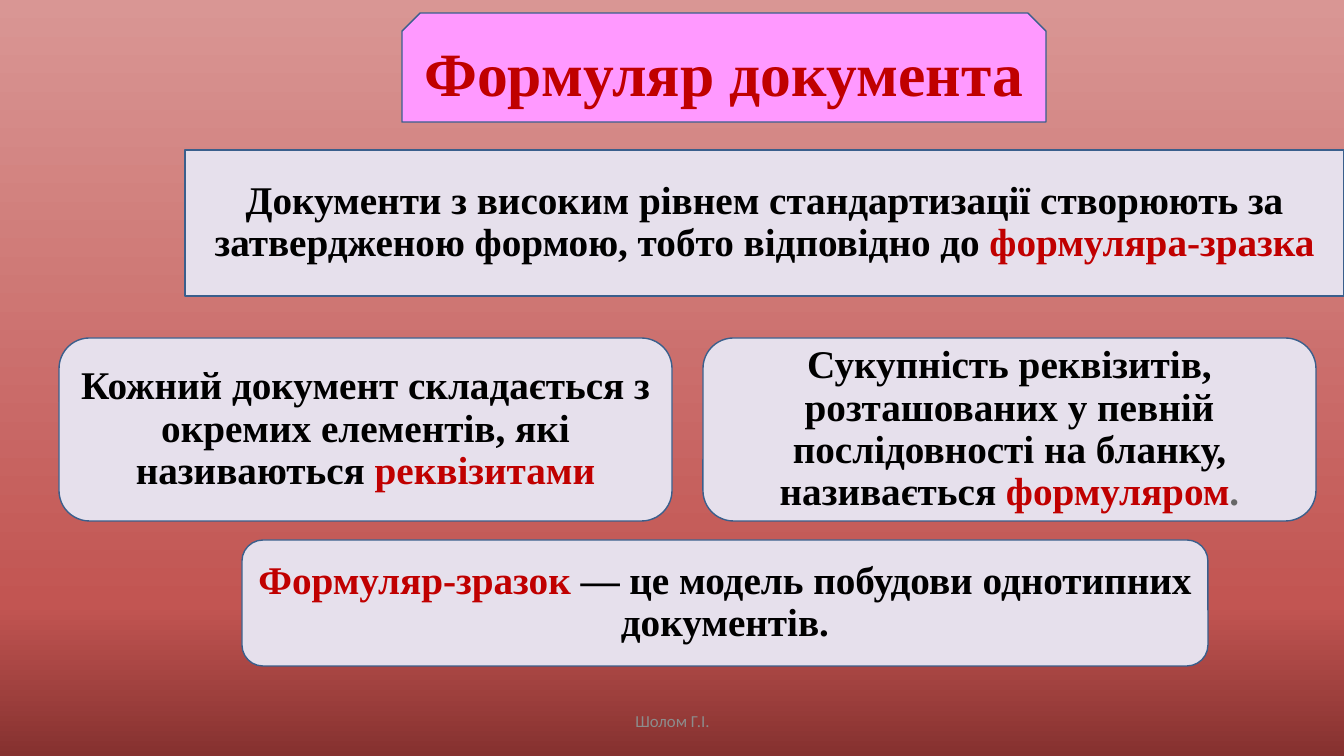
"""Build a slide on the standard form of a document."""
from lxml.etree import SubElement
from pptx import Presentation
from pptx.dml.color import RGBColor
from pptx.enum.shapes import MSO_SHAPE as Shape
from pptx.enum.text import MSO_ANCHOR as Anchor, MSO_AUTO_SIZE as AutoSize, PP_ALIGN as Align
from pptx.oxml.ns import qn
from pptx.util import Emu, Pt

BLACK = RGBColor(0x00, 0x00, 0x00)
RED = RGBColor(0xC0, 0x00, 0x00)
GREY = RGBColor(0x67, 0x67, 0x67)
FOOTER_GREY = RGBColor(0x8C, 0x8C, 0x8C)
LAVENDER = RGBColor(0xE6, 0xE0, 0xEC)
PINK = RGBColor(0xFF, 0x99, 0xFF)
OUTLINE = RGBColor(0x3A, 0x5F, 0x8C)
BACKDROP = [
    (0, RGBColor(0x85, 0x31, 0x2F)),
    (20, RGBColor(0xC2, 0x55, 0x52)),
    (100, RGBColor(0xD9, 0x96, 0x94)),
]

PAGE_WIDTH, PAGE_HEIGHT = 1344, 756
EMU_PER_PX = 12192000 / PAGE_WIDTH
SERIF = "Times New Roman"

TITLE_AREA = (185, 150, 1159, 146)
TITLE = [
    ("Документи з високим рівнем стандартизації створюють за "
     "затвердженою формою, тобто відповідно до ", BLACK),
    ("формуляра-зразка", RED),
]
HEADING_AREA = (402, 13, 644, 109)
HEADING = [("Формуляр документа", RED)]
FOOTER_AREA = (446, 701, 453, 40)
FOOTER = [("Шолом Г.І.", FOOTER_GREY)]
CARDS = [
    ((59, 338, 613, 183), [
        ("Кожний документ складається з окремих елементів, які називаються ", BLACK),
        ("реквізитами", RED),
    ]),
    ((703, 338, 613, 183), [
        ("Сукупність реквізитів, розташованих у певній послідовності "
         "на бланку, називається ", BLACK),
        ("формуляром", RED),
        (".", GREY),
    ]),
    ((242, 540, 966, 126), [
        ("Формуляр-зразок ", RED),
        ("— це модель побудови однотипних документів.", BLACK),
    ]),
]


def px(length):
    return Emu(round(length * EMU_PER_PX))


def place(box, area):
    box.left, box.top, box.width, box.height = map(px, area)


def paint(box, fill):
    box.fill.solid()
    box.fill.fore_color.rgb = fill
    box.line.color.rgb = OUTLINE
    box.line.width = Pt(1)


def write(box, runs, size=28, font=SERIF, bold=True, spacing=0.9):
    frame = box.text_frame
    frame.word_wrap = True
    frame.auto_size = AutoSize.NONE
    frame.vertical_anchor = Anchor.MIDDLE
    para = frame.paragraphs[0]
    para.alignment = Align.CENTER
    para.line_spacing = spacing
    para.space_before = Pt(0)
    for text, color in runs:
        span = para.add_run()
        span.text = text
        span.font.name = font
        span.font.size = Pt(size)
        span.font.bold = bold
        span.font.color.rgb = color


def add_panel(page, kind, area, fill):
    box = page.shapes.add_shape(kind, *map(px, area))
    box.shadow.inherit = False
    paint(box, fill)
    return box


def paint_backdrop(page):
    fill = page.background.fill
    fill.gradient()
    fill.gradient_angle = 90
    stops = page.element.find(".//" + qn("a:gsLst"))
    stops.clear()
    for percent, color in BACKDROP:
        stop = SubElement(stops, qn("a:gs"), pos=str(percent * 1000))
        SubElement(stop, qn("a:srgbClr"), val=str(color))


def main():
    deck = Presentation()
    deck.slide_width, deck.slide_height = px(PAGE_WIDTH), px(PAGE_HEIGHT)
    page = deck.slides.add_slide(deck.slide_layouts[5])
    paint_backdrop(page)

    title = page.shapes.title
    place(title, TITLE_AREA)
    paint(title, LAVENDER)
    write(title, TITLE)

    for area, runs in CARDS:
        write(add_panel(page, Shape.ROUNDED_RECTANGLE, area, LAVENDER), runs)

    heading = add_panel(page, Shape.SNIP_2_SAME_RECTANGLE, HEADING_AREA, PINK)
    write(heading, HEADING, size=44, spacing=1.0)

    footer = page.shapes.add_textbox(*map(px, FOOTER_AREA))
    write(footer, FOOTER, size=12, font="Calibri", bold=False, spacing=1.0)

    deck.save("out.pptx")


if __name__ == "__main__":
    main()
